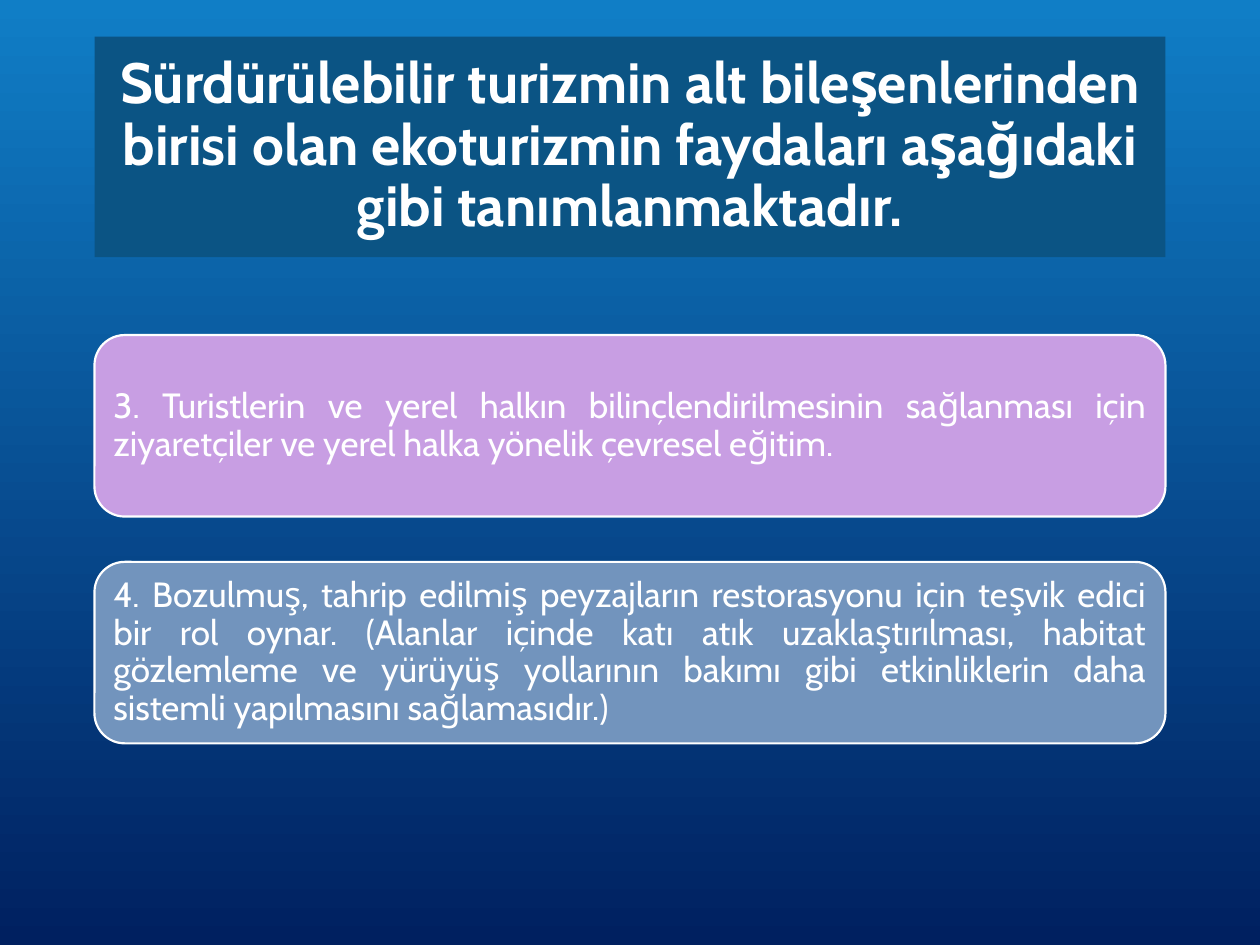
from typing import NamedTuple

from pptx import Presentation
from pptx.dml.color import RGBColor
from pptx.enum.shapes import MSO_SHAPE
from pptx.enum.text import MSO_ANCHOR, MSO_AUTO_SIZE, PP_ALIGN
from pptx.util import Inches, Pt

COLORS = {
    "sky": "107EC6",
    "navy": "002060",
    "banner": "0B5484",
    "lilac": "C89EE3",
    "steel": "7294BD",
    "white": "FFFFFF",
}
FONT = "Cabin"
LEFT, WIDTH = 0.75, 8.5
CARD_TOP, CARD_HEIGHT, CARD_STEP = 2.66, 1.44, 1.8


class Card(NamedTuple):
    text: str
    color: str


TITLE = ("Sürdürülebilir turizmin alt bileşenlerinden birisi olan "
         "ekoturizmin faydaları aşağıdaki gibi tanımlanmaktadır.")
CARDS = [
    Card("3. Turistlerin ve yerel halkın bilinçlendirilmesinin sağlanması için "
         "ziyaretçiler ve yerel halka yönelik çevresel eğitim.", "lilac"),
    Card("4. Bozulmuş, tahrip edilmiş peyzajların restorasyonu için teşvik edici "
         "bir rol oynar. (Alanlar içinde katı atık uzaklaştırılması, habitat "
         "gözlemleme ve yürüyüş yollarının bakımı gibi etkinliklerin daha "
         "sistemli yapılmasını sağlamasıdır.)", "steel"),
]


def rgb(name: str) -> RGBColor:
    return RGBColor.from_string(COLORS[name])


def fill_text(shape, text: str, size: float, align: PP_ALIGN, bold: bool = False) -> None:
    tf = shape.text_frame
    tf.text = text
    tf.word_wrap = True
    tf.auto_size = MSO_AUTO_SIZE.NONE
    tf.vertical_anchor = MSO_ANCHOR.MIDDLE
    p = tf.paragraphs[0]
    p.alignment = align
    p.line_spacing = 0.9
    p.font.name = FONT
    p.font.size = Pt(size)
    p.font.bold = bold
    p.font.color.rgb = rgb("white")


def paint_background(s) -> None:
    fill = s.background.fill
    fill.gradient()
    fill.gradient_angle = 270
    for stop, name in zip(fill.gradient_stops, ("sky", "navy")):
        stop.color.rgb = rgb(name)


def add_title(s) -> None:
    title = s.shapes.title
    title.left, title.top = Inches(LEFT), Inches(0.29)
    title.width, title.height = Inches(WIDTH), Inches(1.75)
    title.fill.solid()
    title.fill.fore_color.rgb = rgb("banner")
    fill_text(title, TITLE, 32.4, PP_ALIGN.CENTER, bold=True)


def add_card(s, card: Card, top: float) -> None:
    sp = s.shapes.add_shape(MSO_SHAPE.ROUNDED_RECTANGLE, Inches(LEFT), Inches(top),
                            Inches(WIDTH), Inches(CARD_HEIGHT))
    sp.shadow.inherit = False
    sp.fill.solid()
    sp.fill.fore_color.rgb = rgb(card.color)
    sp.line.color.rgb = rgb("white")
    sp.line.width = Pt(1.25)
    tf = sp.text_frame
    tf.margin_left = tf.margin_right = tf.margin_top = tf.margin_bottom = Inches(0.08)
    fill_text(sp, card.text, 20, PP_ALIGN.JUSTIFY)


def main() -> None:
    prs = Presentation()
    prs.slide_width, prs.slide_height = Inches(10), Inches(7.5)
    s = prs.slides.add_slide(prs.slide_layouts.get_by_name("Title Only"))
    paint_background(s)
    add_title(s)
    for i, card in enumerate(CARDS):
        add_card(s, card, CARD_TOP + i * CARD_STEP)
    prs.save("out.pptx")


if __name__ == "__main__":
    main()
